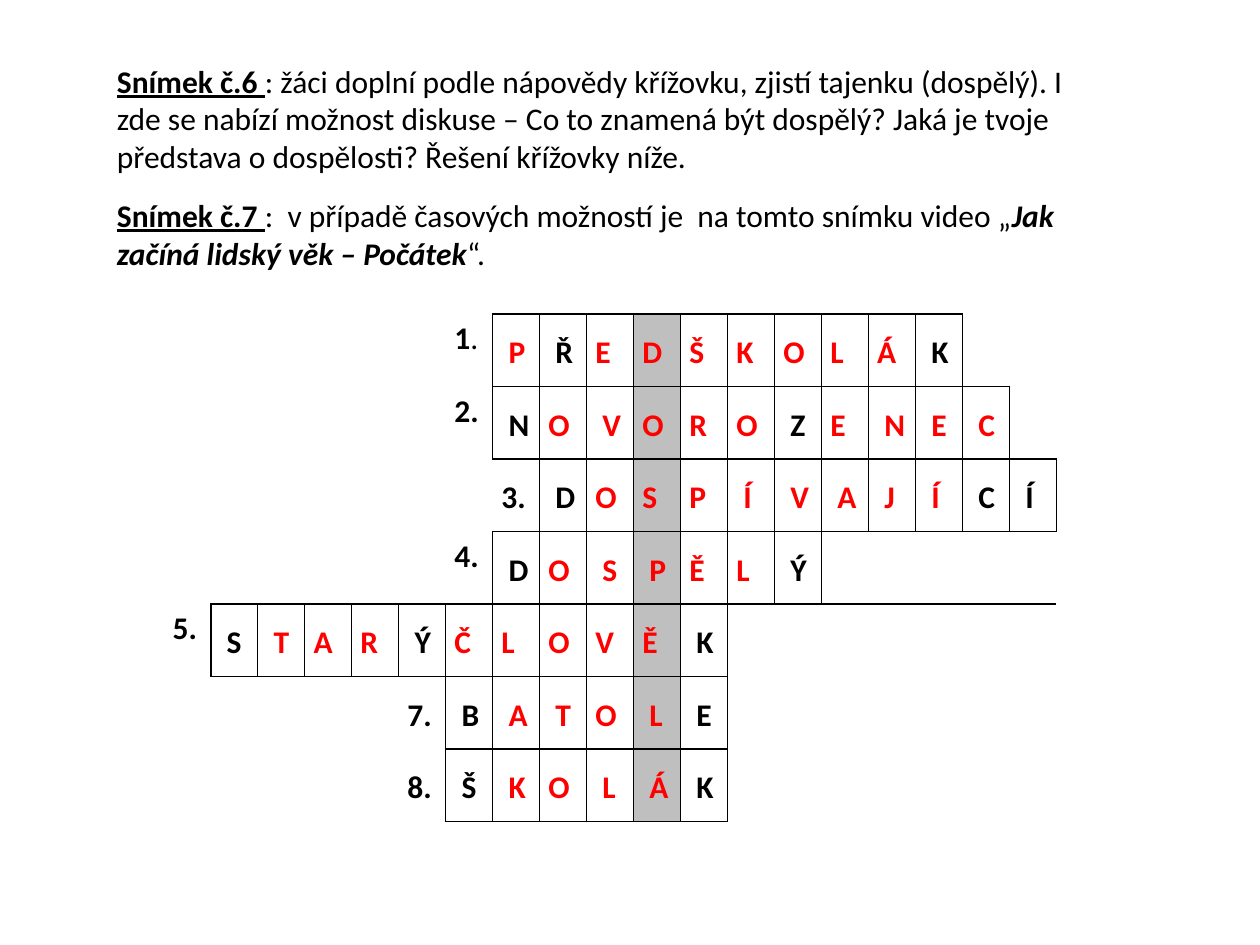
import pptx
import pptx.dml.color
import pptx.enum.text
import pptx.oxml
import pptx.oxml.ns
import pptx.util
from pptx.util import Inches

BLACK, RED, GREY = "000000", "FF0000", "BFBFBF"
COLS, KEY = 19, 10  # grid width and column of the hidden word
TOP = pptx.enum.text.MSO_ANCHOR.TOP
MID = pptx.enum.text.MSO_ANCHOR.MIDDLE

# Number, its column, its anchor, letters: + black, others red, ~ fixed space
WORDS = [
    ("1.", 6, TOP, "~P +Ř E~ D~ Š~ K~ O L~ Á~ +K"),
    ("2.", 6, TOP, "+N O ~V O R~ O +Z E~ ~N ~E ~C"),
    ("3.", 7, MID, "+D O S~ P~ ~Í ~V ~A ~J ~Í +C +Í"),
    ("4.", 6, TOP, "+D O ~S ~P Ě~ L~ +Ý"),
    ("5.", 0, TOP, "+S ~T A~ R~ +Ý Č~ L~ O V~ Ě~ +K"),
    ("7.", 5, MID, "+B ~A ~T O ~L +E"),
    ("8.", 5, MID, "+Š ~K O ~L ~Á +K"),
]

# Text, bold, underline, italic
NOTES = [
    [("Snímek č.6 ", True, True, False),
     (": žáci doplní podle nápovědy křížovku, zjistí tajenku (dospělý). "
      "I zde se nabízí možnost diskuse – Co to znamená být dospělý? "
      "Jaká je tvoje představa o dospělosti? Řešení křížovky níže.",
      False, False, False)],
    [("Snímek č.7 ", True, True, False),
     (":  v případě časových možností je  na tomto snímku video „",
      False, False, False),
     ("Jak začíná lidský věk – Počátek", True, False, True),
     ("“.", False, False, False)],
]


def color(text):
    return pptx.dml.color.RGBColor.from_string(text)


class Page:
    font, size = "Calibri", 18

    def __init__(self, deck):
        self.slide = deck.slides.add_slide(deck.slide_layouts[6])

    def run(self, para, text, tint=BLACK, bold=True, under=False, ital=False):
        run = para.add_run()
        run.text = text
        font = run.font
        font.name, font.size = self.font, pptx.util.Pt(self.size)
        font.bold, font.underline, font.italic = bold, under, ital
        font.color.rgb = color(tint)

    def text(self, left, top, width, height, paras):
        box = self.slide.shapes.add_textbox(
            Inches(left), Inches(top), Inches(width), Inches(height))
        frame = box.text_frame
        frame.word_wrap = True
        frame.auto_size = pptx.enum.text.MSO_AUTO_SIZE.SHAPE_TO_FIT_TEXT
        for i, runs in enumerate(paras):
            para = frame.paragraphs[0] if i == 0 else frame.add_paragraph()
            para.space_after = pptx.util.Pt(12)
            for words, bold, under, ital in runs:
                self.run(para, words, BLACK, bold, under, ital)

    def table(self, left, top, width, height, rows, cols):
        table = self.slide.shapes.add_table(
            rows, cols, Inches(left), Inches(top),
            Inches(width), Inches(height)).table
        table.first_row = table.horz_banding = False
        return table

    def edges(self, cell, sides):
        props = cell._tc.get_or_add_tcPr()
        for side in "LRTB":
            fill = (f'<a:solidFill><a:srgbClr val="{BLACK}"/></a:solidFill>'
                    if side in sides else "<a:noFill/>")
            props.append(pptx.oxml.parse_xml(
                f'<a:ln{side} {pptx.oxml.ns.nsdecls("a")} w="12700">'
                f'{fill}</a:ln{side}>'))

    def cell(self, cell, runs, anchor):
        cell.margin_left = cell.margin_right = Inches(0.07)
        cell.margin_top = cell.margin_bottom = 0
        cell.vertical_anchor = anchor
        para = cell.text_frame.paragraphs[0]
        para.line_spacing = 1.15
        for text, tint, bold in runs:
            self.run(para, text, tint, bold)

    def puzzle(self, left, top, width, height):
        table = self.table(left, top, width, height, len(WORDS), COLS)
        boxed = {(r, start + 1 + i): mark
                 for r, (_, start, _, word) in enumerate(WORDS)
                 for i, mark in enumerate(word.split())}
        # Line that runs on to the right, below the fourth word
        ruled = {(3, c) for c in range(14, COLS)}

        # Frames and fills
        for r in range(len(WORDS)):
            for c in range(COLS):
                cell = table.cell(r, c)
                near = {"L": (r, c - 1), "R": (r, c + 1),
                        "T": (r - 1, c), "B": (r + 1, c)}
                sides = {s for s, spot in near.items()
                         if (r, c) in boxed or spot in boxed}
                if (r, c) in ruled:
                    sides.add("B")
                if (r - 1, c) in ruled:
                    sides.add("T")
                self.edges(cell, sides)
                if c == KEY:
                    cell.fill.solid()
                    cell.fill.fore_color.rgb = color(GREY)
                else:
                    cell.fill.background()

        # Letters
        for (r, c), mark in boxed.items():
            text = mark.replace("+", "~").replace("~", chr(160))
            tint = BLACK if "+" in mark else RED
            self.cell(table.cell(r, c), [(text, tint, True)], MID)

        # Numbers; the first one has a light full stop
        for r, (num, start, anchor, _) in enumerate(WORDS):
            runs = [(num, BLACK, True)]
            if r == 0:
                runs = [(num[0], BLACK, True), (num[1], BLACK, False)]
            self.cell(table.cell(r, start), runs, anchor)


def main():
    deck = pptx.Presentation()
    deck.slide_width, deck.slide_height = Inches(10), Inches(7.5)
    page = Page(deck)
    page.text(0.83, 0.44, 8.11, 1.78, NOTES)
    page.puzzle(1.3, 2.49, 7.09, 4.03)
    deck.save("out.pptx")


if __name__ == "__main__":
    main()
